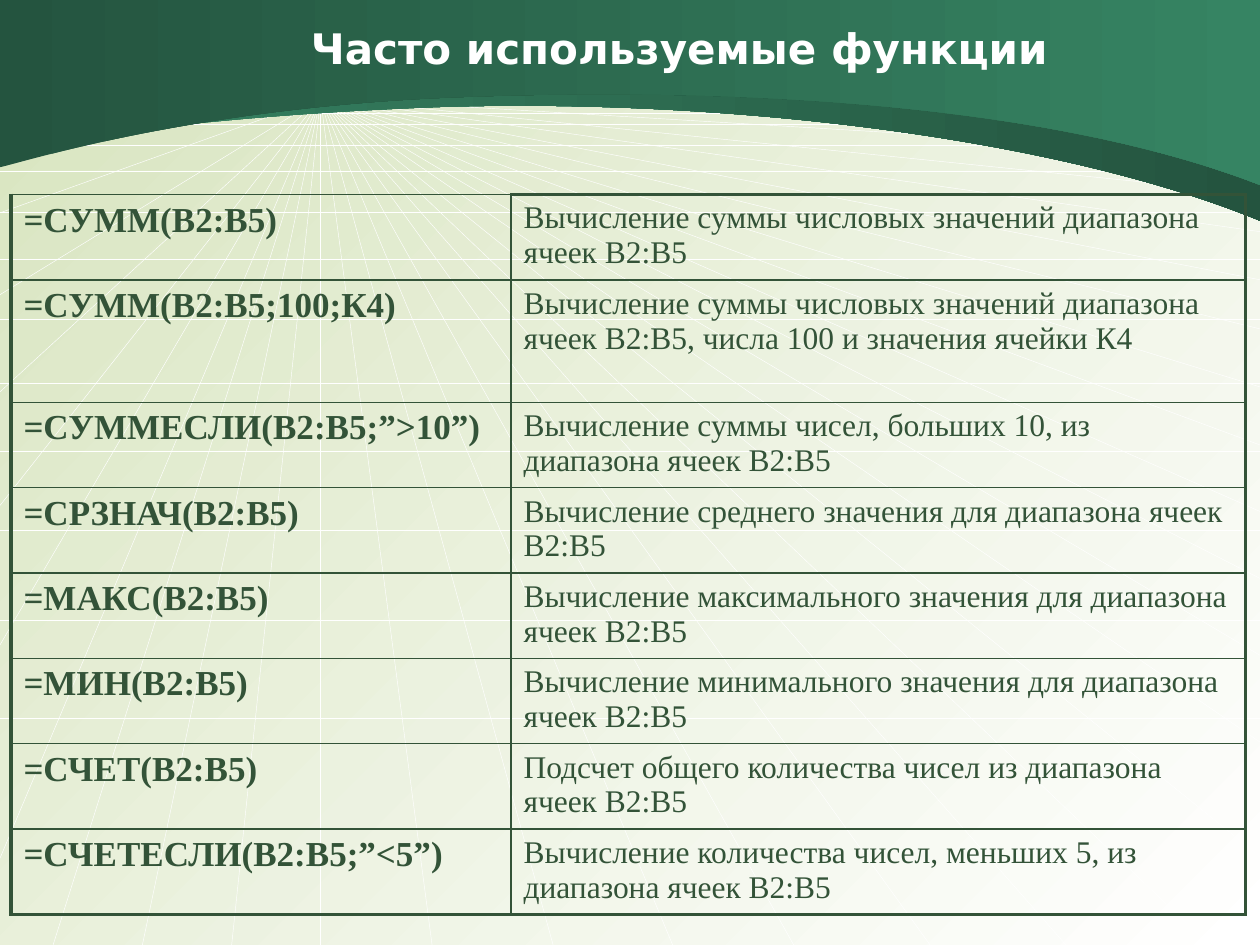
from dataclasses import dataclass

from lxml import etree
from pptx import Presentation
from pptx.dml.color import RGBColor
from pptx.enum.shapes import MSO_CONNECTOR
from pptx.enum.text import MSO_ANCHOR, PP_ALIGN
from pptx.oxml.ns import qn
from pptx.util import Cm, Pt

STRAIGHT = MSO_CONNECTOR.STRAIGHT
MIDDLE = MSO_ANCHOR.MIDDLE
CENTER = PP_ALIGN.CENTER


@dataclass(frozen=True)
class Theme:
    """Colours, fonts and sizes of the slide."""
    white: str = "FFFFFF"
    pale: str = "D7E4BE"
    ink: str = "335338"
    dark: str = "24543F"
    green: str = "368463"
    title_font: str = "DejaVu Sans"
    body_font: str = "Times New Roman"
    title_size: float = 24
    formula_size: float = 20
    note_size: float = 18
    ray: float = 0.25
    thin: float = 1
    thick: float = 2.25


THEME = Theme()
WIDTH, HEIGHT = 25.4, 19.05

FOCUS = (6.46, 1.98)
RIGHT_ENDS = (2.54, 3.12, 3.91, 4.67, 5.64, 6.63, 7.8, 8.97, 10.31, 11.66,
              13.21, 14.96, 17.27)
BOTTOM_ENDS = (1.07, 2.87, 4.67, 6.46, 8.71, 11.15, 13.56, 16, 18.75, 21.49,
               24.38)
LEFT_ENDS = (1.98, 2.46, 2.95, 4.29, 5.94, 7.9, 10.19, 13, 17.3)
LEVELS = (2.13, 2.29, 2.5, 2.93, 3.45, 4.27, 5.23, 6.43, 7.72, 9.09, 10.69,
          12.5, 14.48)

BACK_ARC = ((0, 3.02), (0.28, 3), (3.38, 2.36), (8.81, 2.16),
            (14.25, 1.98), (21.11, 2.69), (25.4, 4.45))
FRONT_ARC = ((0, 3.37), (0.28, 3.33), (3.84, 2.16), (9.25, 1.96),
             (14.66, 1.75), (21.11, 2.06), (25.4, 3.73))

FUNCTIONS = (
    ("=СУММ(В2:В5)",
     "Вычисление суммы числовых значений диапазона ячеек В2:В5"),
    ("=СУММ(В2:В5;100;К4)",
     "Вычисление суммы числовых значений диапазона ячеек В2:В5, "
     "числа 100 и значения ячейки К4"),
    ("=СУММЕСЛИ(В2:В5;”>10”)",
     "Вычисление суммы чисел, больших 10, из диапазона ячеек В2:В5"),
    ("=СРЗНАЧ(В2:В5)",
     "Вычисление среднего значения для диапазона ячеек В2:В5"),
    ("=МАКС(В2:В5)",
     "Вычисление максимального значения для диапазона ячеек В2:В5"),
    ("=МИН(В2:В5)",
     "Вычисление минимального значения для диапазона ячеек В2:В5"),
    ("=СЧЕТ(В2:В5)",
     "Подсчет общего количества чисел из диапазона ячеек В2:В5"),
    ("=СЧЕТЕСЛИ(В2:В5;”<5”)",
     "Вычисление количества чисел, меньших 5, из диапазона ячеек В2:В5"),
)


def rgb(color):
    """Turn a hex string into a colour."""
    return RGBColor.from_string(color)


def set_gradient(fill, start, end, angle):
    """Give a fill a two-stop linear gradient."""
    fill.gradient()
    fill.gradient_angle = angle
    for stop, color, position in zip(fill.gradient_stops, (start, end), (0, 1)):
        stop.color.rgb = rgb(color)
        stop.position = position


def add_ray(s, start, end):
    """Draw one hairline of the backdrop."""
    line = s.shapes.add_connector(STRAIGHT, *map(Cm, (*start, *end)))
    line.line.color.rgb = rgb(THEME.white)
    line.line.width = Pt(THEME.ray)
    etree.SubElement(line.element.spPr, qn("a:effectLst"))


def add_backdrop(s, x, y, w, h):
    """Draw the rays from the focus and the horizontal levels in a box."""
    focus = (x + FOCUS[0], y + FOCUS[1])
    ends = [(x + w, y + dy) for dy in RIGHT_ENDS]
    ends += [(x + dx, y + h) for dx in BOTTOM_ENDS]
    ends += [(x, y + dy) for dy in LEFT_ENDS]
    for end in ends:
        add_ray(s, focus, end)
    for dy in LEVELS:
        add_ray(s, (x, y + dy), (x + w, y + dy))


def bend_lines(sp, count):
    """Join the first segments of a freeform, three by three, into curves."""
    segments = list(sp.element.iter(qn("a:lnTo")))[:count]
    for i in range(0, count, 3):
        curve = etree.Element(qn("a:cubicBezTo"))
        segments[i].addprevious(curve)
        for segment in segments[i:i + 3]:
            curve.append(segment[0])
            segment.getparent().remove(segment)


def add_band(s, x, y, w, arc, start, end):
    """Draw a header band that is closed below by an arc."""
    points = [(Cm(px), Cm(py)) for px, py in arc]
    builder = s.shapes.build_freeform(*points[0], scale=1.0)
    builder.add_line_segments(points[1:] + [(Cm(w), 0), (0, 0)], close=True)
    band = builder.convert_to_shape(Cm(x), Cm(y))
    bend_lines(band, len(arc) - 1)
    band.shadow.inherit = False
    band.line.fill.background()
    set_gradient(band.fill, start, end, 0)


def move_to_layout(s, shapes):
    """Hand the decoration of a slide over to its layout."""
    for number, sp in enumerate(shapes, start=100):
        next(sp.element.iter(qn("p:cNvPr"))).set("id", str(number))
        s.slide_layout.shapes.element.append(sp.element)


def add_title(s, text, x, y, w, h):
    """Place and format the title."""
    title = s.shapes.title
    title.left, title.top, title.width, title.height = map(Cm, (x, y, w, h))
    tf = title.text_frame
    tf.text = text
    tf.word_wrap = True
    tf.vertical_anchor = MIDDLE
    p = tf.paragraphs[0]
    p.alignment = CENTER
    p.font.name = THEME.title_font
    p.font.size = Pt(THEME.title_size)
    p.font.bold = True
    p.font.color.rgb = rgb(THEME.white)


def set_borders(cell, widths):
    """Draw the left, right, top and bottom borders of a cell."""
    tc_pr = cell._tc.get_or_add_tcPr()
    for side, width in zip("LRTB", widths):
        ln = etree.SubElement(tc_pr, qn(f"a:ln{side}"), w=str(Pt(width)))
        fill = etree.SubElement(ln, qn("a:solidFill"))
        etree.SubElement(fill, qn("a:srgbClr"), val=THEME.ink)


def add_function_table(s, x, y, w, h):
    """Fill a box with the formulas and their meanings."""
    last = len(FUNCTIONS) - 1
    tall = 2.47
    table = s.shapes.add_table(last + 1, 2, *map(Cm, (x, y, w, h))).table
    table.first_row = table.horz_banding = False
    formula_width = 10.08
    table.columns[0].width = Cm(formula_width)
    table.columns[1].width = Cm(w - formula_width)
    for i, texts in enumerate(FUNCTIONS):
        table.rows[i].height = Cm(tall if i == 1 else (h - tall) / last)
        for j, text in enumerate(texts):
            cell = table.cell(i, j)
            outer = (j == 0, j == 1, i == 0 and j == 1, i == last)
            set_borders(cell, [THEME.thick if o else THEME.thin for o in outer])
            cell.fill.background()
            cell.text = text
            font = cell.text_frame.paragraphs[0].font
            font.name = THEME.body_font
            font.size = Pt(THEME.note_size if j else THEME.formula_size)
            font.bold = j == 0
            font.color.rgb = rgb(THEME.ink)


def main():
    """Build and save the slide."""
    prs = Presentation()
    prs.slide_width, prs.slide_height = Cm(WIDTH), Cm(HEIGHT)
    s = prs.slides.add_slide(prs.slide_layouts.get_by_name("Title Only"))
    set_gradient(s.background.fill, THEME.pale, THEME.white, 315)
    add_backdrop(s, 0, 0, WIDTH, HEIGHT)
    add_band(s, 0, 0, WIDTH, BACK_ARC, THEME.green, THEME.dark)
    add_band(s, 0, 0, WIDTH, FRONT_ARC, THEME.dark, THEME.green)
    move_to_layout(s, list(s.shapes)[1:])
    add_title(s, "Часто используемые функции", 2.9, 0.33, 21.59, 1.27)
    add_function_table(s, 0.22, 3.92, 24.89, 14.51)
    prs.save("out.pptx")


if __name__ == "__main__":
    main()
